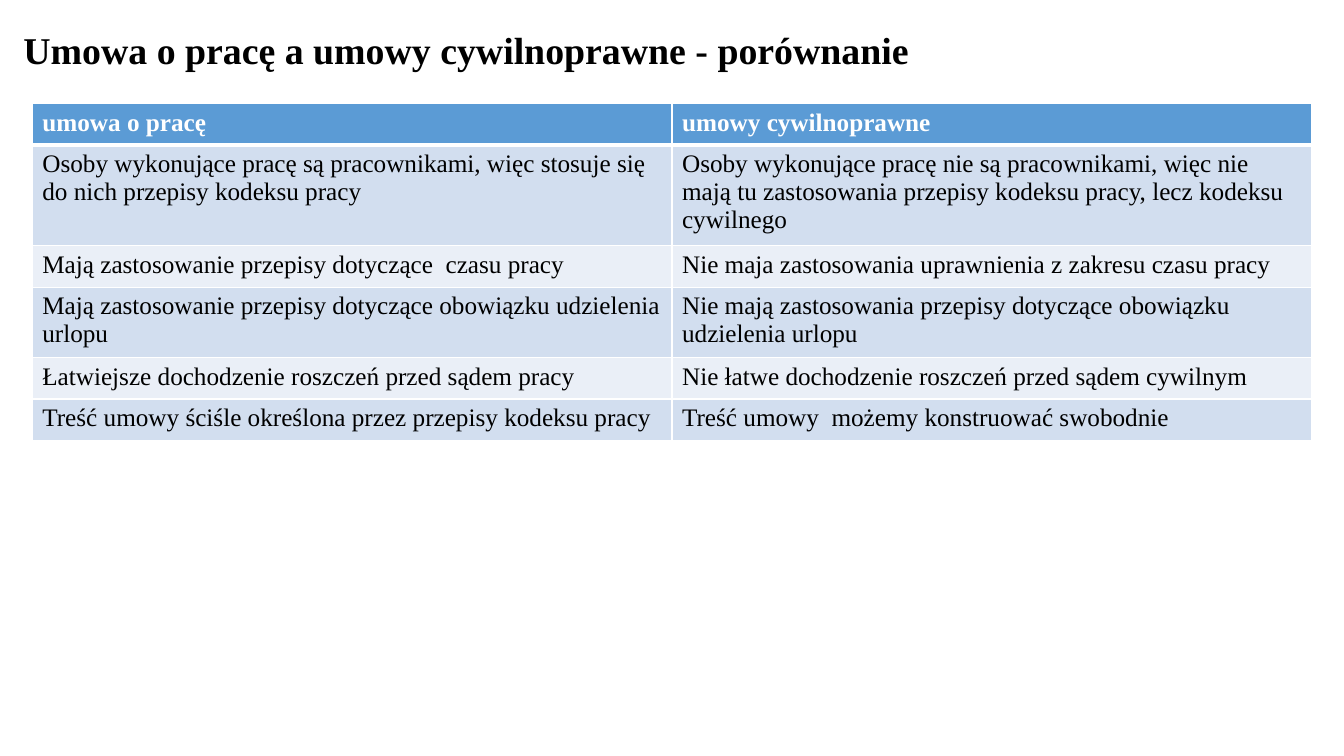
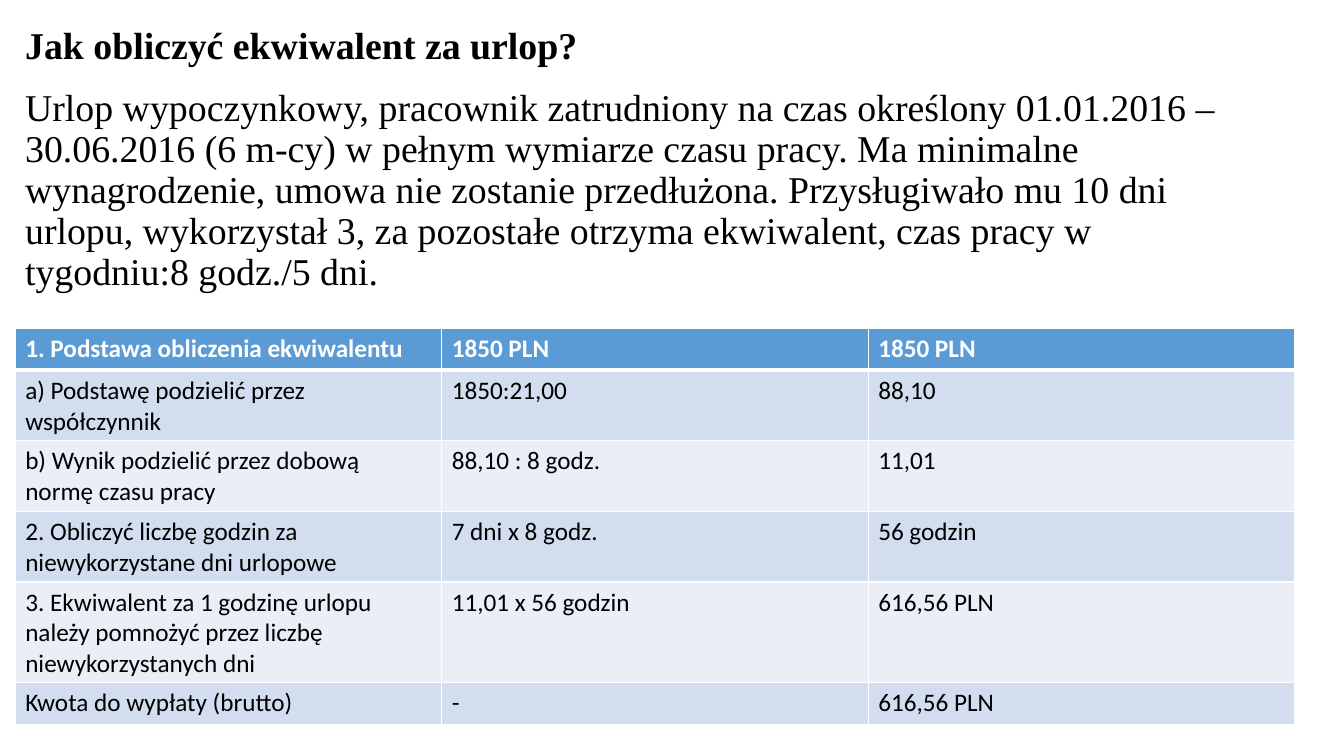
from lxml import etree
from pptx import Presentation
from pptx.dml.color import RGBColor
from pptx.enum.text import MSO_ANCHOR
from pptx.oxml.ns import qn
from pptx.util import Inches, Pt

TOP, MIDDLE = MSO_ANCHOR.TOP, MSO_ANCHOR.MIDDLE
COLORS = {
    "text": "000000",
    "header": "5B9BD5",
    "header_text": "FFFFFF",
    "border": "FFFFFF",
    "odd_row": "D2DEEF",
    "even_row": "EAEFF7",
}
SERIF, SANS = "Times New Roman", "Calibri"
LARGE, SMALL = 27, 18
ROW_HEIGHT = 5.47
THIN, THICK = 1, 3

CONTRACTS = [
    ("umowa o pracę", "umowy cywilnoprawne"),
    ("Osoby wykonujące pracę są pracownikami, więc stosuje się do nich przepisy kodeksu pracy",
     "Osoby wykonujące pracę nie są pracownikami, więc nie mają tu zastosowania przepisy "
     "kodeksu pracy, lecz kodeksu cywilnego"),
    ("Mają zastosowanie przepisy dotyczące  czasu pracy",
     "Nie maja zastosowania uprawnienia z zakresu czasu pracy"),
    ("Mają zastosowanie przepisy dotyczące obowiązku udzielenia urlopu",
     "Nie mają zastosowania przepisy dotyczące obowiązku udzielenia urlopu"),
    ("Łatwiejsze dochodzenie roszczeń przed sądem pracy",
     "Nie łatwe dochodzenie roszczeń przed sądem cywilnym"),
    ("Treść umowy ściśle określona przez przepisy kodeksu pracy",
     "Treść umowy  możemy konstruować swobodnie"),
]
LEAVE_CASE = (
    "Urlop wypoczynkowy, pracownik zatrudniony na czas określony 01.01.2016 – 30.06.2016 "
    "(6 m-cy) w pełnym wymiarze czasu pracy. Ma minimalne wynagrodzenie, umowa nie zostanie "
    "przedłużona. Przysługiwało mu 10 dni urlopu, wykorzystał 3, za pozostałe otrzyma "
    "ekwiwalent, czas pracy w tygodniu:8 godz./5 dni."
)
CALCULATION = [
    ("1. Podstawa obliczenia ekwiwalentu", "1850 PLN", "1850 PLN"),
    ("a) Podstawę podzielić przez współczynnik", "1850:21,00", "88,10"),
    ("b) Wynik podzielić przez dobową normę czasu pracy", "88,10 : 8 godz.", "11,01"),
    ("2. Obliczyć liczbę godzin za niewykorzystane dni urlopowe", "7 dni x 8 godz.", "56 godzin"),
    ("3. Ekwiwalent za 1 godzinę urlopu należy pomnożyć przez liczbę niewykorzystanych dni",
     "11,01 x 56 godzin", "616,56 PLN"),
    ("Kwota do wypłaty (brutto)", "-", "616,56 PLN"),
]


class LessonDeck:
    """Holds the deck, its style and the current slide; lengths are percent of the slide."""

    def __init__(self):
        self.deck = Presentation()
        self.deck.slide_width = Inches(13.33)
        self.deck.slide_height = Inches(7.5)
        self.page = None

    def add_page(self):
        self.page = self.deck.slides.add_slide(self.deck.slide_layouts[6])

    def across(self, percent):
        return round(self.deck.slide_width * percent / 100)

    def down(self, percent):
        return round(self.deck.slide_height * percent / 100)

    def add_span(self, para, text, size, font=SERIF, color="text", bold=False):
        span = para.add_run()
        span.text = text
        span.font.name = font
        span.font.size = Pt(size)
        span.font.bold = bold
        span.font.color.rgb = RGBColor.from_string(COLORS[color])

    def add_text(self, left, top, width, height, text, anchor=TOP, bold=False, space_before=0):
        box = self.page.shapes.add_textbox(
            self.across(left), self.down(top), self.across(width), self.down(height))
        frame = box.text_frame
        frame.word_wrap = True
        frame.vertical_anchor = anchor
        para = frame.paragraphs[0]
        para.line_spacing = 0.9
        para.space_before = Pt(space_before)
        self.add_span(para, text, LARGE, bold=bold)

    def add_title(self, left, top, width, height, text):
        self.add_text(left, top, width, height, text, anchor=MIDDLE, bold=True)

    def add_borders(self, cell, top, bottom):
        properties = cell._tc.get_or_add_tcPr()
        for side, points in (("L", THIN), ("R", THIN), ("T", top), ("B", bottom)):
            line = etree.SubElement(properties, qn(f"a:ln{side}"), w=str(Pt(points)))
            fill = etree.SubElement(line, qn("a:solidFill"))
            etree.SubElement(fill, qn("a:srgbClr"), val=COLORS["border"])

    def add_cell(self, cell, row, text, font):
        is_header = row == 0
        self.add_borders(cell, THICK if row == 1 else THIN, THICK if is_header else THIN)
        fill = "header" if is_header else "odd_row" if row % 2 else "even_row"
        cell.fill.solid()
        cell.fill.fore_color.rgb = RGBColor.from_string(COLORS[fill])
        self.add_span(cell.text_frame.paragraphs[0], text, SMALL, font,
                      "header_text" if is_header else "text", is_header)

    def add_table(self, left, top, width, rows, font):
        table = self.page.shapes.add_table(
            len(rows), len(rows[0]), self.across(left), self.down(top),
            self.across(width), self.down(ROW_HEIGHT * len(rows))).table
        table.horz_banding = False
        for row, texts in enumerate(rows):
            for column, text in enumerate(texts):
                self.add_cell(table.cell(row, column), row, text, font)

    def save(self):
        self.deck.save("out.pptx")


def main():
    lesson = LessonDeck()

    lesson.add_page()
    lesson.add_title(1, 1.6, 92.1, 10.5, "Umowa o pracę a umowy cywilnoprawne - porównanie")
    lesson.add_table(2.4, 13.7, 95.2, CONTRACTS, SERIF)

    lesson.add_page()
    lesson.add_title(1.13, 0, 92, 12.4, "Jak obliczyć ekwiwalent za urlop?")
    lesson.add_text(1.13, 11.1, 92, 78.9, LEAVE_CASE, space_before=10)
    lesson.add_table(1.13, 43.5, 95.2, CALCULATION, SANS)

    lesson.save()


if __name__ == "__main__":
    main()
